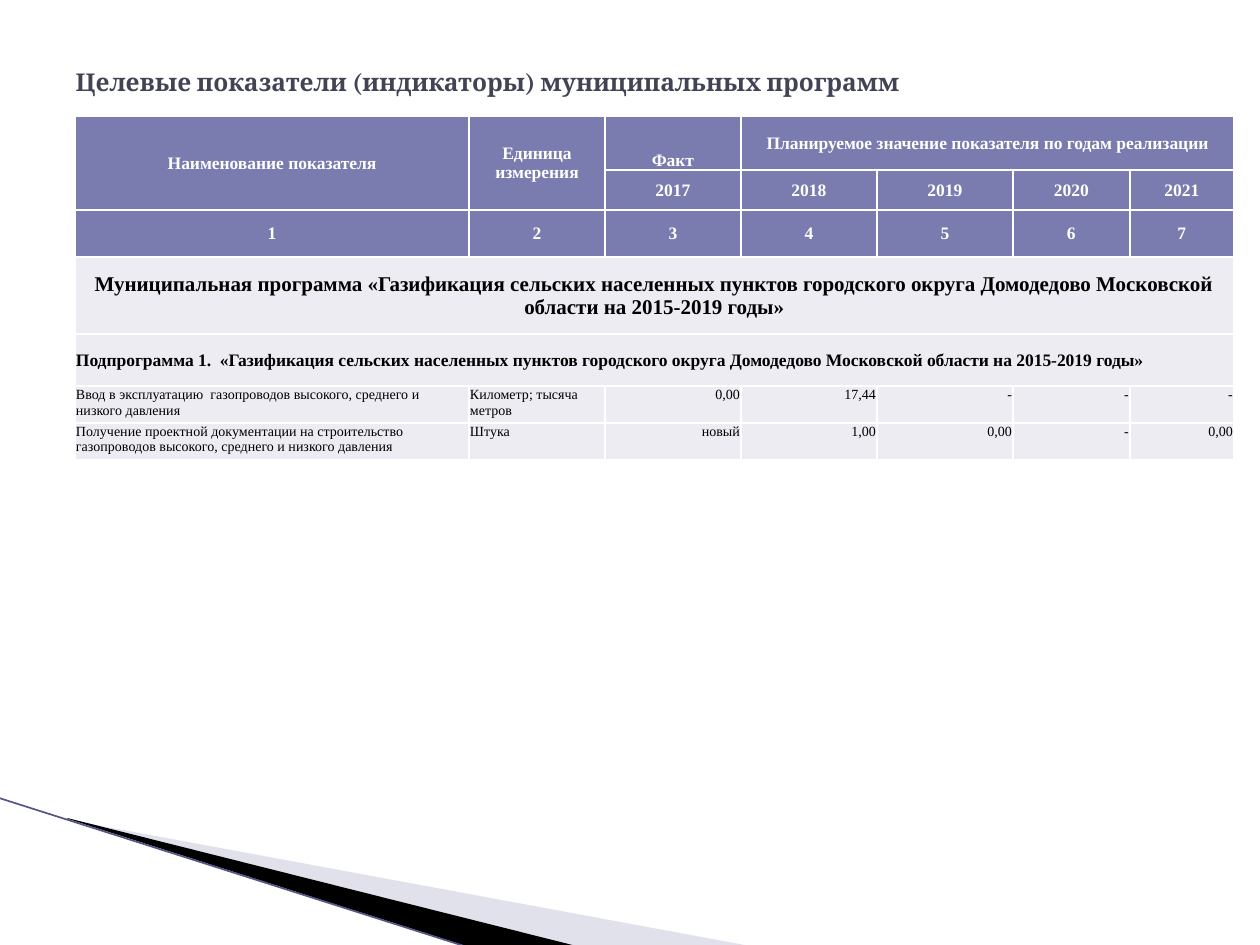
from dataclasses import dataclass

from lxml import etree
from pptx import Presentation
from pptx import util as u
from pptx.dml.color import RGBColor
from pptx.enum import shapes, text
from pptx.oxml import ns

PX = 914400 // 126
COLORS = {"title": "424456", "head": "7A7BAE", "body": "ECECF2", "white": "FFFFFF",
          "black": "000000", "wedge": "B6B6D1", "edge": "53548A"}
FONT = "Times New Roman"
LEFT, CENTER, RIGHT = text.PP_ALIGN.LEFT, text.PP_ALIGN.CENTER, text.PP_ALIGN.RIGHT
TOP, MIDDLE, BOTTOM = (text.MSO_ANCHOR.TOP, text.MSO_ANCHOR.MIDDLE,
                       text.MSO_ANCHOR.BOTTOM)

COLUMNS = [394, 136, 136, 136, 136, 117, 104]
ROWS = [54, 40, 47, 77, 52, 37, 37]
HEAD_ROWS = 3
PROGRAM = ("«Газификация сельских населенных пунктов городского округа "
           "Домодедово Московской области на 2015-2019 годы»")
# None marks a cell covered by a merged neighbour.
CELLS = [
    ["Наименование показателя", "Единица измерения", "Факт",
     "Планируемое значение показателя по годам реализации", None, None, None],
    [None, None, "2017", "2018", "2019", "2020", "2021"],
    ["1", "2", "3", "4", "5", "6", "7"],
    ["Муниципальная программа " + PROGRAM] + [None] * 6,
    ["Подпрограмма 1.  " + PROGRAM] + [None] * 6,
    ["Ввод в эксплуатацию  газопроводов высокого, среднего и низкого давления",
     "Километр; тысяча метров", "0,00", "17,44", "-", "-", "-"],
    ["Получение проектной документации на строительство газопроводов высокого, "
     "среднего и низкого давления", "Штука", "новый", "1,00", "0,00", "-", "0,00"],
]
MERGES = [((0, 0), (1, 0)), ((0, 1), (1, 1)), ((0, 3), (0, 6)),
          ((3, 0), (3, 6)), ((4, 0), (4, 6))]


@dataclass(frozen=True)
class CellStyle:
    size: int
    bold: bool
    color: str
    fill: str
    align: text.PP_ALIGN
    anchor: text.MSO_ANCHOR


HEAD = CellStyle(10, True, "white", "head", CENTER, MIDDLE)
FACT = CellStyle(10, True, "white", "head", CENTER, BOTTOM)
PROGRAM_ROW = CellStyle(12, True, "black", "body", CENTER, MIDDLE)
SUBPROGRAM_ROW = CellStyle(10, True, "black", "body", LEFT, MIDDLE)
LABEL = CellStyle(8, False, "black", "body", LEFT, TOP)
VALUE = CellStyle(8, False, "black", "body", RIGHT, TOP)


@dataclass(frozen=True)
class Wedge:
    points: tuple
    color: str
    opacity: int = 100


WEDGES = [
    Wedge(((69, 820), (750, 946), (575, 946), (69, 819)), "wedge", 40),
    Wedge(((67, 818), (576, 946), (469, 947), (68, 819)), "black"),
]


def rgb(name: str) -> RGBColor:
    return RGBColor.from_string(COLORS[name])


def add_run(p, words: str, font: str, size: int, bold: bool, color: str) -> None:
    r = p.add_run()
    r.text = words
    r.font.name, r.font.size, r.font.bold = font, u.Pt(size), bold
    r.font.color.rgb = rgb(color)


def add_wedge(slide, wedge: Wedge) -> None:
    builder = slide.shapes.build_freeform(*wedge.points[0], scale=PX)
    builder.add_line_segments(wedge.points[1:], close=True)
    sp = builder.convert_to_shape()
    sp.shadow.inherit = False
    sp.line.fill.background()
    sp.fill.solid()
    sp.fill.fore_color.rgb = rgb(wedge.color)
    if wedge.opacity < 100:
        color = sp._element.spPr.find(".//" + ns.qn("a:srgbClr"))
        etree.SubElement(color, ns.qn("a:alpha"), val=str(wedge.opacity * 1000))


def add_edge(slide) -> None:
    """Draw the thin line along the lower side of the wedges."""
    line = slide.shapes.add_connector(shapes.MSO_CONNECTOR.STRAIGHT,
                                      -1 * PX, 798 * PX, 467 * PX, 947 * PX)
    line.line.color.rgb = rgb("edge")
    line.line.width = u.Pt(0.95)
    etree.SubElement(line._element.spPr, ns.qn("a:effectLst"))


def add_borders(cell) -> None:
    tc_pr = cell._tc.get_or_add_tcPr()
    for side in ("lnL", "lnR", "lnT", "lnB"):
        ln = etree.SubElement(tc_pr, ns.qn("a:" + side), w=str(u.Pt(1)))
        fill = etree.SubElement(ln, ns.qn("a:solidFill"))
        etree.SubElement(fill, ns.qn("a:srgbClr"), val=COLORS["white"])


def cell_style(row: int, col: int) -> CellStyle:
    if row < HEAD_ROWS:
        return FACT if (row, col) == (0, 2) else HEAD
    if row == 3:
        return PROGRAM_ROW
    if row == 4:
        return SUBPROGRAM_ROW
    return LABEL if col < 2 else VALUE


def fill_cell(cell, words: str | None, style: CellStyle) -> None:
    add_borders(cell)
    cell.fill.solid()
    cell.fill.fore_color.rgb = rgb(style.fill)
    cell.margin_left = cell.margin_right = cell.margin_top = PX
    cell.margin_bottom = 0
    cell.vertical_anchor = style.anchor
    p = cell.text_frame.paragraphs[0]
    p.alignment = style.align
    if words is None:
        p.font.size = u.Pt(style.size)
    else:
        add_run(p, words, FONT, style.size, style.bold, style.color)


def add_indicators(slide) -> None:
    frame = slide.shapes.add_table(len(ROWS), len(COLUMNS), 75 * PX, 116 * PX,
                                   sum(COLUMNS) * PX, sum(ROWS) * PX)
    table = frame.table
    for column, width in zip(table.columns, COLUMNS):
        column.width = width * PX
    for row, height in zip(table.rows, ROWS):
        row.height = height * PX
    for i, row in enumerate(CELLS):
        for j, words in enumerate(row):
            fill_cell(table.cell(i, j), words, cell_style(i, j))
    for first, last in MERGES:
        table.cell(*first).merge(table.cell(*last))


def set_title(slide) -> None:
    title = slide.shapes.title
    slide.shapes._spTree.append(title._element)  # in front of the wedges
    title.left, title.top = 63 * PX, 38 * PX
    title.width, title.height = 1134 * PX, 87 * PX
    tf = title.text_frame
    tf.word_wrap = True
    tf.vertical_anchor = MIDDLE
    p = tf.paragraphs[0]
    p.alignment = LEFT
    add_run(p, "Целевые показатели (индикаторы) муниципальных программ",
            "Cambria", 14, True, "title")


def main() -> None:
    prs = Presentation()
    prs.slide_width, prs.slide_height = u.Inches(10), u.Inches(7.5)
    slide = prs.slides.add_slide(prs.slide_layouts[5])
    for wedge in WEDGES:
        add_wedge(slide, wedge)
    add_edge(slide)
    set_title(slide)
    add_indicators(slide)
    prs.save("out.pptx")


if __name__ == "__main__":
    main()
